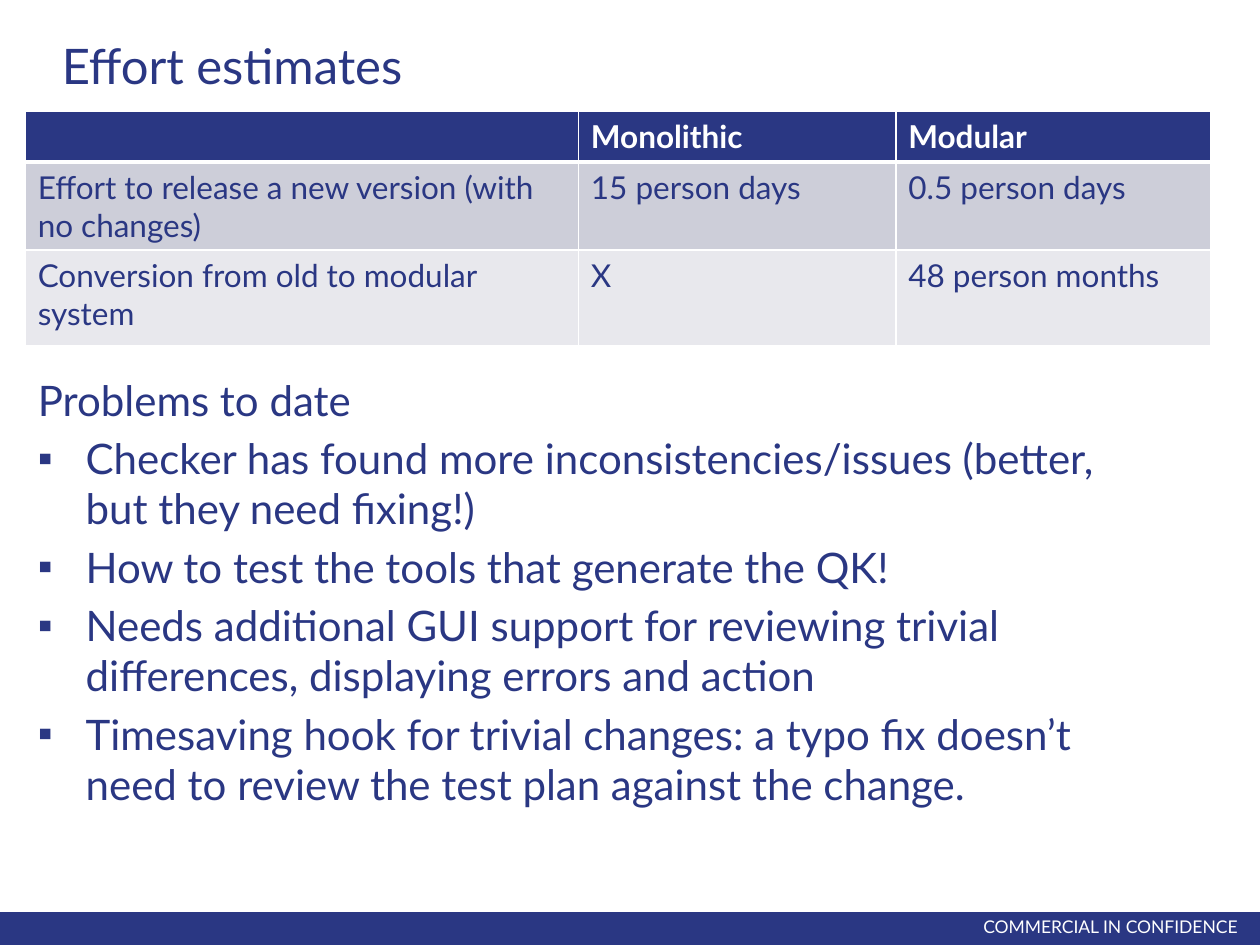
"""Build the slide comparing effort estimates and listing problems to date."""
import pptx
import pptx.dml.color
import pptx.enum.shapes
import pptx.enum.text
import pptx.oxml
import pptx.oxml.ns
import pptx.util
from pptx.util import Inches

TITLE = "Effort estimates"
ESTIMATES = [
    ("", "Monolithic", "Modular"),
    ("Effort to release a new version (with no changes)", "15 person days", "0.5 person days"),
    ("Conversion from old to modular system", "X", "48 person months"),
]
HEADING = "Problems to date"
PROBLEMS = [
    "Checker has found more inconsistencies/issues (better, but they need fixing!)",
    "How to test the tools that generate the QK!",
    "Needs additional GUI support for reviewing trivial differences, displaying errors and action",
    "Timesaving hook for trivial changes: a typo fix doesn’t need to review the test plan "
    "against the change.",
]
FOOTER = "COMMERCIAL IN CONFIDENCE"

THEME = {
    "font": "Lato",
    "navy": "2A3783",
    "white": "FFFFFF",
    "row_fills": ["2A3783", "CDCED9", "E8E8ED"],
    "title_size": 28,
    "body_size": 24,
    "table_size": 18,
    "footer_size": 10,
}
SLIDE_WIDTH, SLIDE_HEIGHT = 10, 7.5
COLUMN_WIDTHS = [4.39, 2.52, 2.5]
ROW_HEIGHTS = [0.39, 0.69, 0.76]
BAR_HEIGHT = 0.26
BULLET_INDENT = 0.38


def colour(name):
    return pptx.dml.color.RGBColor.from_string(THEME.get(name, name))


def place(shape, left, top, width, height):
    shape.left, shape.top = Inches(left), Inches(top)
    shape.width, shape.height = Inches(width), Inches(height)


def style(para, size, ink, bold=False):
    for span in para.runs:
        span.font.name = THEME["font"]
        span.font.size = pptx.util.Pt(THEME[size])
        span.font.color.rgb = colour(ink)
        span.font.bold = bold


def set_frame(frame, anchor):
    frame.word_wrap = True
    frame.auto_size = pptx.enum.text.MSO_AUTO_SIZE.NONE
    frame.vertical_anchor = anchor


def set_bullet(para, mark):
    properties = para._p.get_or_add_pPr()
    indent = Inches(BULLET_INDENT) if mark else 0
    properties.set("marL", str(indent))
    properties.set("indent", str(-indent))
    bullet = pptx.oxml.parse_xml(
        f'<a:{"buChar" if mark else "buNone"} {pptx.oxml.ns.nsdecls("a")}/>')
    if mark:
        bullet.set("char", mark)
    properties.append(bullet)


def set_borders(cell, bottom_width):
    properties = cell._tc.get_or_add_tcPr()
    widths = {"lnL": 1, "lnR": 1, "lnT": 1, "lnB": bottom_width}
    for position, (side, width) in enumerate(widths.items()):
        properties.insert(position, pptx.oxml.parse_xml(
            f'<a:{side} {pptx.oxml.ns.nsdecls("a")} w="{pptx.util.Pt(width)}">'
            f'<a:solidFill><a:srgbClr val="{THEME["white"]}"/></a:solidFill></a:{side}>'))


def add_footer(page):
    bar = page.shapes.add_shape(
        pptx.enum.shapes.MSO_SHAPE.RECTANGLE, 0, Inches(SLIDE_HEIGHT - BAR_HEIGHT),
        Inches(SLIDE_WIDTH), Inches(BAR_HEIGHT))
    bar.shadow.inherit = False
    bar.fill.solid()
    bar.fill.fore_color.rgb = colour("navy")
    bar.line.fill.background()
    box = page.shapes.add_textbox(Inches(6.45), Inches(7.22), Inches(3.47), Inches(0.27))
    set_frame(box.text_frame, pptx.enum.text.MSO_ANCHOR.MIDDLE)
    para = box.text_frame.paragraphs[0]
    para.text = FOOTER
    para.alignment = pptx.enum.text.PP_ALIGN.RIGHT
    style(para, "footer_size", "white")


def fill_title(title):
    place(title, 0.39, 0.23, 9.11, 0.79)
    set_frame(title.text_frame, pptx.enum.text.MSO_ANCHOR.TOP)
    para = title.text_frame.paragraphs[0]
    para.text = TITLE
    para.alignment = pptx.enum.text.PP_ALIGN.LEFT
    style(para, "title_size", "navy")


def fill_problems(body):
    place(body, 0.2, 2.92, 9, 2.13)
    frame = body.text_frame
    set_frame(frame, pptx.enum.text.MSO_ANCHOR.TOP)
    frame.text = "\n".join([HEADING] + PROBLEMS)
    for index, para in enumerate(frame.paragraphs):
        set_bullet(para, "▪" if index else None)
        para.space_before = pptx.util.Pt(4.5 if index else 0)
        style(para, "body_size", "navy")


def add_estimates(page):
    table = page.shapes.add_table(
        len(ROW_HEIGHTS), len(COLUMN_WIDTHS), Inches(0.2), Inches(0.88),
        Inches(sum(COLUMN_WIDTHS)), Inches(sum(ROW_HEIGHTS))).table
    for column, width in zip(table.columns, COLUMN_WIDTHS):
        column.width = Inches(width)
    for index, (row, texts) in enumerate(zip(table.rows, ESTIMATES)):
        header = index == 0
        row.height = Inches(ROW_HEIGHTS[index])
        for cell, text in zip(row.cells, texts):
            cell.fill.solid()
            cell.fill.fore_color.rgb = colour(THEME["row_fills"][index])
            set_borders(cell, 3 if header else 1)
            if text:
                para = cell.text_frame.paragraphs[0]
                para.text = text
                style(para, "table_size", "white" if header else "navy", header)


def main():
    deck = pptx.Presentation()
    deck.slide_width, deck.slide_height = Inches(SLIDE_WIDTH), Inches(SLIDE_HEIGHT)
    page = deck.slides.add_slide(deck.slide_layouts[1])
    add_footer(page)
    fill_title(page.shapes.title)
    fill_problems(page.placeholders[1])
    add_estimates(page)
    deck.save("out.pptx")


if __name__ == "__main__":
    main()
